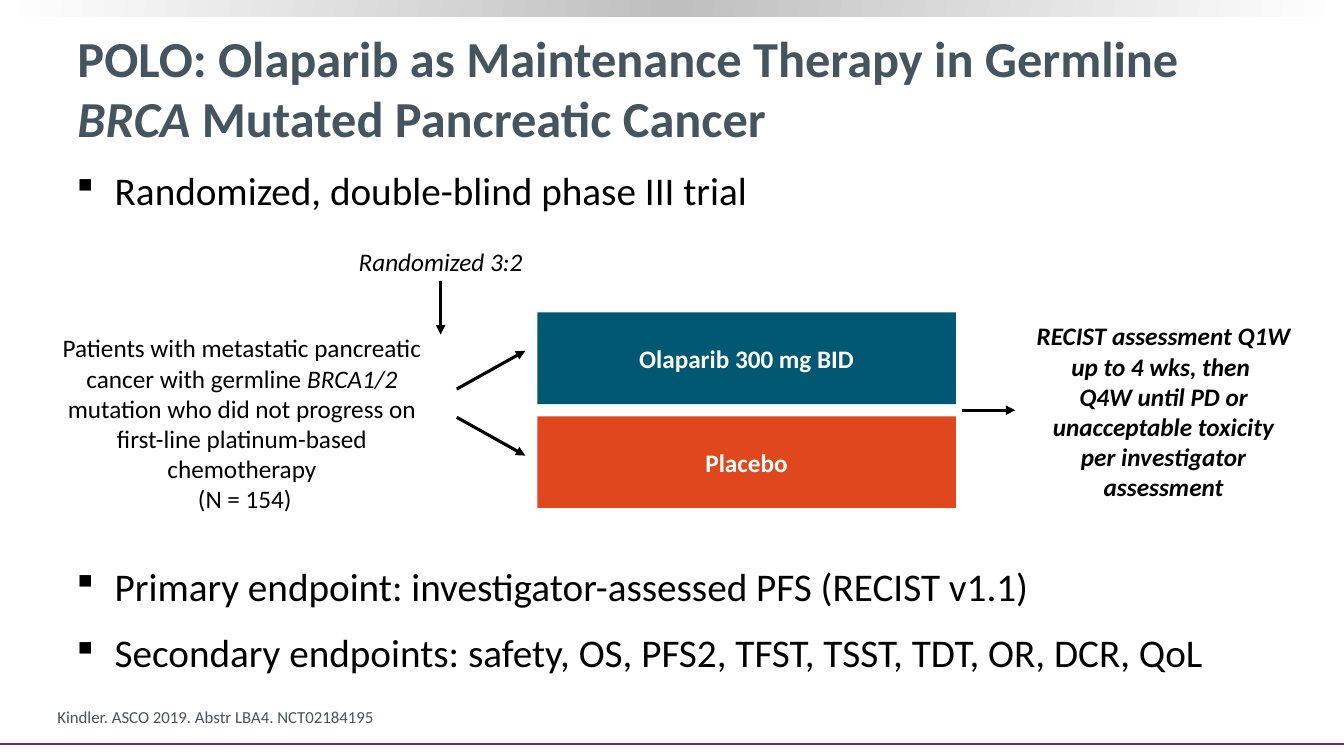
from copy import deepcopy

from lxml import etree
from pptx import Presentation
from pptx.dml.color import RGBColor
from pptx.enum import shapes, text
from pptx.oxml import ns
from pptx.util import Inches, Pt

FONT = "Calibri"
BLACK = RGBColor(0x00, 0x00, 0x00)
WHITE = RGBColor(0xFF, 0xFF, 0xFF)
SILVER = RGBColor(0xBF, 0xBF, 0xBF)
SLATE = RGBColor(0x45, 0x55, 0x60)
PURPLE = RGBColor(0x68, 0x2E, 0x74)
TEAL = RGBColor(0x01, 0x58, 0x73)
ORANGE = RGBColor(0xE1, 0x47, 0x1D)

LEFT, CENTER = text.PP_ALIGN.LEFT, text.PP_ALIGN.CENTER
TOP, MIDDLE, BOTTOM = (text.MSO_ANCHOR.TOP, text.MSO_ANCHOR.MIDDLE,
                       text.MSO_ANCHOR.BOTTOM)

# A paragraph is a list of spans: (words, italic)
TITLE = [[("POLO: Olaparib as Maintenance Therapy in Germline ", False),
          ("BRCA", True), (" Mutated Pancreatic Cancer", False)]]
PATIENTS = [[("Patients with metastatic pancreatic cancer with germline ", False),
             ("BRCA1/2 ", True),
             ("mutation who did not progress on first-line platinum-based "
              "chemotherapy", False)],
            [(" (N = 154)", False)]]
ASSESSMENT = [[("RECIST assessment Q1W up to 4 wks, then \nQ4W until PD or "
                "unacceptable toxicity per investigator assessment", True)]]
RATIO = [[("Randomized 3:2", True)]]
CITATION = [[("Kindler. ASCO 2019. Abstr LBA4. NCT02184195", False)]]

# Bullet and the space before it in points; the second leaves room for the diagram
BULLETS = [
    ("Randomized, double-blind phase III trial", 10),
    ("Primary endpoint: investigator-assessed PFS (RECIST v1.1)", 246),
    ("Secondary endpoints: safety, OS, PFS2, TFST, TSST, TDT, OR, DCR, QoL", 10),
]

# Place, paragraphs, size, colour, bold, alignment, anchor
LABELS = [
    ((0.67, 0.26, 11.89, 1.21), TITLE, 36, SLATE, True, LEFT, MIDDLE),
    ((0.45, 3.25, 3.9, 1.92), PATIENTS, 18, BLACK, False, CENTER, TOP),
    ((10.18, 3.12, 2.72, 1.92), ASSESSMENT, 18, BLACK, True, CENTER, MIDDLE),
    ((2.53, 2.39, 3.68, 0.4), RATIO, 18, BLACK, False, CENTER, MIDDLE),
    ((0.47, 6.96, 9.19, 0.3), CITATION, 12, SLATE, False, LEFT, BOTTOM),
]

ARMS = [("Olaparib 300 mg BID", TEAL), ("Placebo", ORANGE)]
ARM_LEFT, ARM_TOP, ARM_WIDTH, ARM_HEIGHT, ARM_PITCH = 5.33, 3.1, 4.15, 0.91, 1.03

ARROWS = [
    (4.37, 2.79, 4.37, 3.32),
    (4.53, 3.86, 5.21, 3.48),
    (4.53, 4.14, 5.21, 4.52),
    (9.54, 4.07, 10.07, 4.07),
]


def style(span, size, color, bold=False, italic=False):
    font = span.font
    font.name, font.size, font.bold, font.italic = FONT, Pt(size), bold, italic
    font.color.rgb = color


def add_rectangle(page, place):
    box = page.shapes.add_shape(shapes.MSO_SHAPE.RECTANGLE, *map(Inches, place))
    box.shadow.inherit = False
    box.line.fill.background()
    return box


def add_text_box(page, place, anchor):
    frame = page.shapes.add_textbox(*map(Inches, place)).text_frame
    frame.word_wrap = True
    frame.vertical_anchor = anchor
    return frame


def add_label(page, place, paragraphs, size, color, bold, align, anchor):
    frame = add_text_box(page, place, anchor)
    for index, spans in enumerate(paragraphs):
        para = frame.add_paragraph() if index else frame.paragraphs[0]
        para.alignment = align
        for words, italic in spans:
            for number, line in enumerate(words.split("\n")):
                if number:
                    para.add_line_break()
                span = para.add_run()
                span.text = line
                style(span, size, color, bold, italic)


def add_line(page, ends, color, width, arrow=False):
    line = page.shapes.add_connector(shapes.MSO_CONNECTOR.STRAIGHT,
                                     *map(Inches, ends))
    line.line.color.rgb = color
    line.line.width = Pt(width)
    if arrow:
        outline = line.line._get_or_add_ln()
        etree.SubElement(outline, ns.qn("a:tailEnd"), type="triangle")
    etree.SubElement(line._element.spPr, ns.qn("a:effectLst"))


def add_top_band(page):
    """Draw the band that fades from silver in the middle to white at the sides."""
    fill = add_rectangle(page, (0, 0, 13.33, 0.16)).fill
    fill.gradient()
    first, last = fill.gradient_stops
    for stop, position, color in ((first, 0, WHITE), (last, 0.5, SILVER)):
        stop.position = position
        stop.color.rgb = color
    fill.gradient_angle = 170
    stops = fill._xPr.find(ns.qn("a:gradFill")).find(ns.qn("a:gsLst"))
    side = deepcopy(stops[0])
    side.set("pos", "100000")
    stops.append(side)


def add_bullets(page):
    frame = add_text_box(page, (0.66, 1.65, 11.9, 5.09), TOP)
    for index, (words, space) in enumerate(BULLETS):
        para = frame.add_paragraph() if index else frame.paragraphs[0]
        para.text = words
        para.line_spacing = 0.9
        para.space_before, para.space_after = Pt(space), Pt(7)
        style(para.runs[0], 28, BLACK)
        properties = para._p.get_or_add_pPr()
        properties.set("marL", str(Inches(0.38)))
        properties.set("indent", str(-Inches(0.38)))
        etree.SubElement(properties, ns.qn("a:buFont"), typeface="Wingdings")
        etree.SubElement(properties, ns.qn("a:buChar"), char="§")


def add_arms(page):
    for index, (name, color) in enumerate(ARMS):
        box = add_rectangle(page, (ARM_LEFT, ARM_TOP + index * ARM_PITCH,
                                   ARM_WIDTH, ARM_HEIGHT))
        box.fill.solid()
        box.fill.fore_color.rgb = color
        frame = box.text_frame
        frame.text = name
        frame.vertical_anchor = MIDDLE
        frame.paragraphs[0].alignment = CENTER
        style(frame.paragraphs[0].runs[0], 18, WHITE, bold=True)


def main():
    deck = Presentation()
    deck.slide_width, deck.slide_height = Inches(13.33), Inches(7.5)
    page = deck.slides.add_slide(deck.slide_layouts[6])
    add_top_band(page)
    add_line(page, (0, 7.38, 13.33, 7.38), PURPLE, 1.5)
    add_bullets(page)
    for label in LABELS:
        add_label(page, *label)
    add_arms(page)
    for ends in ARROWS:
        add_line(page, ends, BLACK, 2.25, arrow=True)
    deck.save("out.pptx")


if __name__ == "__main__":
    main()
